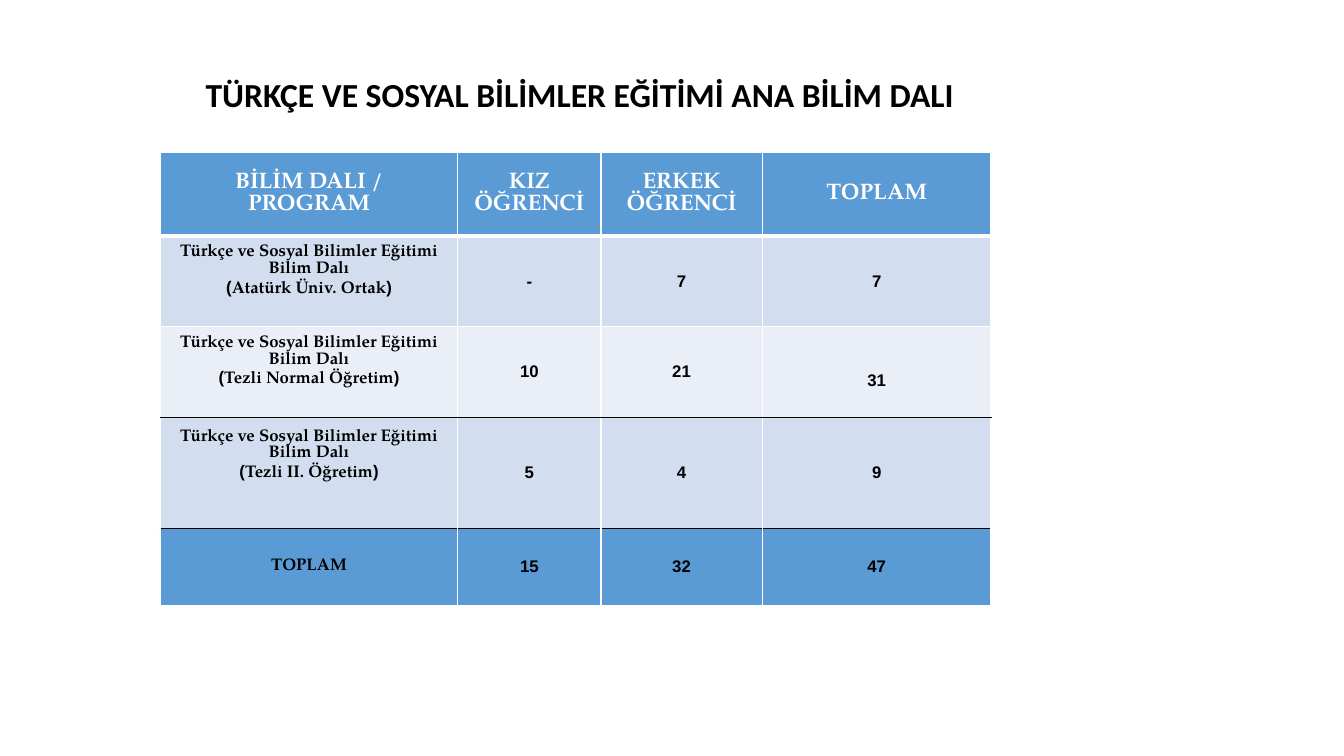
"""Build a slide of student numbers by programme and gender."""
from dataclasses import dataclass

from pptx import Presentation
from pptx import util as u
from pptx.dml.color import RGBColor
from pptx.enum import text
from pptx.oxml.ns import qn
from lxml import etree

COLORS = {"white": "FFFFFF", "black": "000000", "header": "5B9BD5",
          "band": "D2DEEF", "light": "EAEFF7"}
COLUMNS = (2.95, 1.42, 1.6, 2.27)
TABLE_LEFT = 1.59
PROGRAM = "Türkçe ve Sosyal Bilimler Eğitimi Bilim Dalı"


@dataclass
class Row:
    values: tuple[str, ...]
    height: float
    fill: str
    size: int = 12
    color: str = "black"
    top: tuple[str, int] = ("white", 1)
    bottom: tuple[str, int] = ("white", 1)
    label_bottom: float = 0.05
    total_top: float = 0.05


STUDENT_ROWS = (
    Row(("BİLİM DALI / PROGRAM", "KIZ ÖĞRENCİ", "ERKEK ÖĞRENCİ", "TOPLAM"),
        0.83, "header", size=16, color="white", bottom=("white", 3)),
    Row((f"{PROGRAM}\n(Atatürk Üniv. Ortak)", "-", "7", "7"),
        0.9, "band", top=("white", 3), label_bottom=0.25),
    Row((f"{PROGRAM}\n(Tezli Normal Öğretim)", "10", "21", "31"),
        0.9, "light", bottom=("black", 1), label_bottom=0.25, total_top=0.22),
    Row((f"{PROGRAM}\n(Tezli II. Öğretim)", "5", "4", "9"),
        1.1, "band", top=("black", 1), bottom=("black", 1), label_bottom=0.39),
)
TOTAL_ROWS = (
    Row(("TOPLAM", "15", "32", "47"), 0.77, "header", top=("black", 1)),
)


def rgb(name: str) -> RGBColor:
    return RGBColor.from_string(COLORS[name])


def apply(target, values: dict) -> None:
    for attribute, value in values.items():
        setattr(target, attribute, value)


def format_font(font, name: str, size: int, color: str) -> None:
    apply(font, {"name": name, "size": u.Pt(size), "bold": True})
    font.color.rgb = rgb(color)


def add_borders(cell, row: Row) -> None:
    properties = cell._tc.get_or_add_tcPr()
    side = ("white", 1)
    edges = {"lnL": side, "lnR": side, "lnT": row.top, "lnB": row.bottom}
    for position, (tag, (color, width)) in enumerate(edges.items()):
        line = etree.Element(qn(f"a:{tag}"), w=str(u.Pt(width)))
        fill = etree.SubElement(line, qn("a:solidFill"))
        etree.SubElement(fill, qn("a:srgbClr"), val=COLORS[color])
        properties.insert(position, line)


def fill_cell(cell, row: Row, column: int) -> None:
    value = row.values[column]
    bottom = row.label_bottom if column == 0 else 0.05
    top = row.total_top if column == len(COLUMNS) - 1 else 0.05
    cell.text = value
    apply(cell, {"vertical_anchor": text.MSO_ANCHOR.MIDDLE,
                 "margin_left": u.Inches(0.15), "margin_right": u.Inches(0.15),
                 "margin_top": u.Inches(top), "margin_bottom": u.Inches(bottom)})
    cell.fill.solid()
    cell.fill.fore_color.rgb = rgb(row.fill)
    add_borders(cell, row)
    for paragraph in cell.text_frame.paragraphs:
        paragraph.alignment = text.PP_ALIGN.CENTER
        if value != STUDENT_ROWS[0].values[0]:
            paragraph._p.get_or_add_pPr().set("rtl", "1")
        for run in paragraph.runs:
            format_font(run.font, "TeX Gyre Pagella", row.size, row.color)
            etree.SubElement(run._r.get_or_add_rPr(), qn("a:cs"), typeface="Arial")


def add_student_table(slide, rows: tuple[Row, ...], top: float) -> None:
    table = slide.shapes.add_table(
        len(rows), len(COLUMNS), u.Inches(TABLE_LEFT), u.Inches(top),
        u.Inches(sum(COLUMNS)), u.Inches(sum(row.height for row in rows))).table
    for column, width in zip(table.columns, COLUMNS):
        column.width = u.Inches(width)
    for index, row in enumerate(rows):
        table.rows[index].height = u.Inches(row.height)
        for column in range(len(COLUMNS)):
            fill_cell(table.cell(index, column), row, column)


def add_title(slide) -> None:
    title = slide.shapes.add_textbox(
        u.Inches(1.94), u.Inches(0.68), u.Inches(8.12), u.Inches(0.91)).text_frame
    title.word_wrap = True
    title.text = "TÜRKÇE VE SOSYAL BİLİMLER EĞİTİMİ ANA BİLİM DALI"
    format_font(title.paragraphs[0].runs[0].font, "Calibri", 24, "black")


def main() -> None:
    deck = Presentation()
    apply(deck, {"slide_width": u.Inches(13.33), "slide_height": u.Inches(7.5)})
    slide = deck.slides.add_slide(deck.slide_layouts[6])
    add_title(slide)
    add_student_table(slide, STUDENT_ROWS, 1.51)
    add_student_table(slide, TOTAL_ROWS, 5.24)
    deck.save("out.pptx")


if __name__ == "__main__":
    main()
